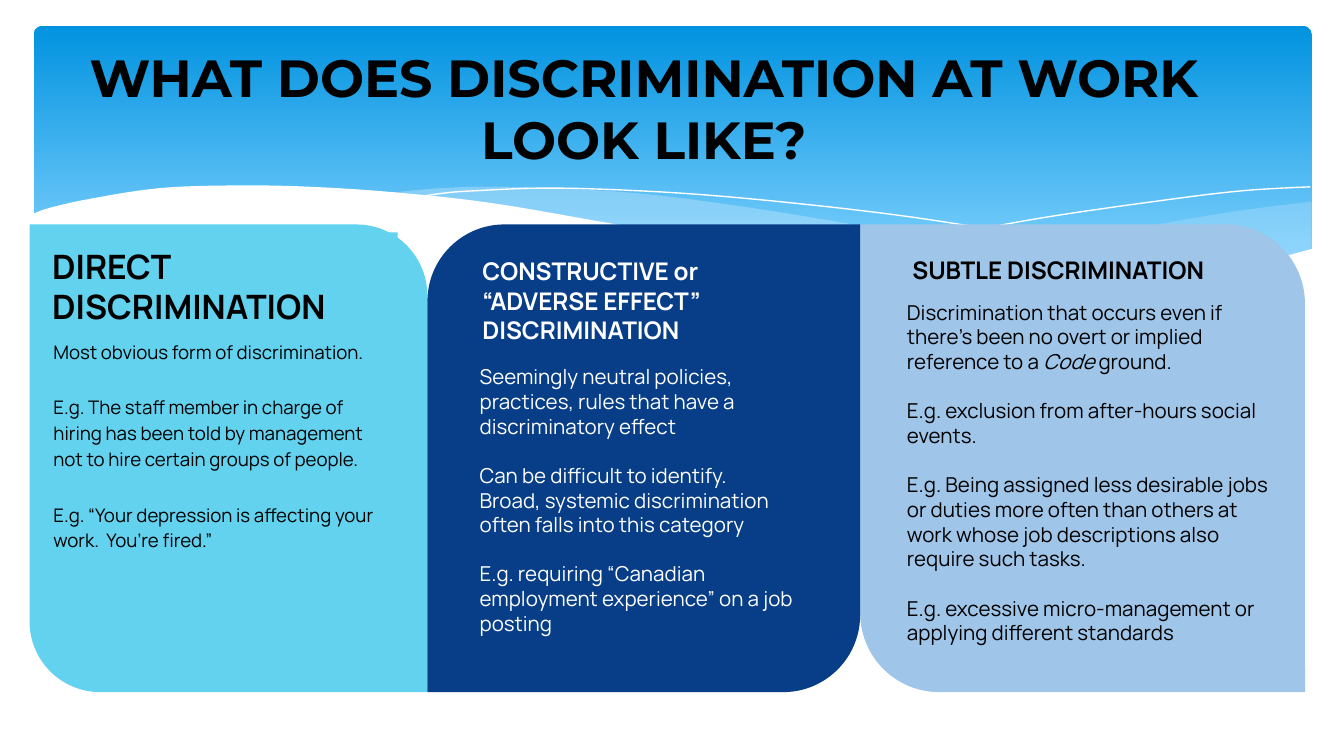
from pptx import Presentation, oxml
from pptx import util as u
from pptx.dml import color as c
from pptx.enum import shapes, text
from pptx.oxml import ns

COLORS = {
    "black": "000000", "white": "FFFFFF", "sky": "0293E0", "pale": "81D2FE",
    "wave": "C6E7FC", "cyan": "62D2EF", "navy": "073E87", "light": "9FC5E8",
}

BANNER = (0.25, 0.19, 9.51, 2.02)
TITLE = (0.05, 0.18, 9.48, 1.24)
TOP, HEIGHT = 1.67, 3.48
GAP = 13.2

WAVES = [
    {"fill": "wave", "alpha": 29, "curves": [
        [(9.76, 1.5), (9.21, 1.57), (8.61, 1.67), (7.53, 1.86), (6.61, 1.99)],
        [(6.61, 1.99), (7.32, 2.05), (8.03, 2.08), (8.72, 2.06), (9.28, 1.98), (9.76, 1.85)]]},
    {"fill": "wave", "alpha": 40, "curves": [
        [(8.93, 2.04), (8.07, 1.95), (7.06, 1.8), (6.29, 1.66), (5.41, 1.52),
         (4.65, 1.43), (3.8, 1.39), (3.28, 1.4), (2.86, 1.44)],
        [(2.86, 1.44), (3.62, 1.52), (4.49, 1.66), (5.66, 1.86), (6.65, 2),
         (7.48, 2.07), (8.18, 2.09), (8.93, 2.04)]]},
    {"line": "white", "curves": [
        [(3.09, 1.47), (3.28, 1.44), (3.53, 1.42), (4.16, 1.4), (5.1, 1.44), (6.08, 1.53),
         (6.95, 1.64), (7.95, 1.81), (9.07, 2.04)]]},
    {"line": "white", "curves": [
        [(6.13, 1.92), (6.95, 1.77), (7.76, 1.62), (8.66, 1.49), (9.24, 1.42), (9.75, 1.39)]]},
    {"fill": "white", "curves": [
        [(9.77, 1.85), (9.3, 1.97), (8.75, 2.05), (8.09, 2.07), (7.26, 2.04),
         (6.26, 1.94), (5.29, 1.79), (4.47, 1.65), (3.65, 1.51), (2.92, 1.43),
         (2.3, 1.39), (1.77, 1.38), (1.19, 1.4), (0.67, 1.48), (0.36, 1.55), (0.23, 1.6)],
        [(0.23, 2.47), (9.77, 2.47)]]},
]

COLUMNS = [
    {"box": (6.4, TOP, 3.31, HEIGHT), "fill": "light", "font": "black", "corners": (0, 0.178),
     "heading": {"at": (0.29, 0.13, 3.31, 1.02), "size": 13, "lines": [("SUBTLE DISCRIMINATION", 0)]},
     "body": {"at": (0.25, 0.46, 2.96, 2.44), "size": 11, "fill": "light", "lines": [
         ("Discrimination that occurs even if there’s been no overt or implied "
          "reference to a *Code *ground.", 0),
         ("E.g. exclusion from after-hours social events.", GAP),
         ("E.g. Being assigned less desirable jobs or duties more often than others at "
          "work whose job descriptions also require such tasks.", GAP),
         ("E.g. excessive micro-management or applying different standards", GAP)]}},
    {"box": (0.22, TOP, 2.96, HEIGHT), "fill": "cyan", "font": "black", "corners": (0, 0.178),
     "heading": {"at": (0.07, 0.06, 2.67, 1.02), "size": 18, "fill": "cyan",
                 "lines": [("DIRECT DISCRIMINATION", 0)]},
     "body": {"at": (0.08, 0.74, 2.67, 2.46), "size": 10, "fill": "cyan", "spacing": 1.15, "lines": [
         ("Most obvious form of discrimination.", 0),
         ("E.g. The staff member in charge of hiring has been told by management "
          "not to hire certain groups of people.", 16),
         ("E.g. “Your depression is affecting your work.  You’re fired.”", 16)]}},
    {"box": (3.18, TOP, 3.22, HEIGHT), "fill": "navy", "font": "white", "corners": (0.178, 0),
     "heading": {"at": (0.31, 0.14, 2.61, 1.12), "size": 13,
                 "lines": [("CONSTRUCTIVE or “ADVERSE EFFECT” DISCRIMINATION", 0)]},
     "body": {"at": (0.29, 0.94, 2.71, 2.55), "size": 11, "lines": [
         ("Seemingly neutral policies, practices, rules that have a discriminatory effect", 0),
         ("Can be difficult to identify.", GAP),
         ("Broad, systemic discrimination often falls into this category", 0),
         ("E.g. requiring “Canadian employment experience” on a job posting", GAP)]}},
]


def rgb(name):
    return c.RGBColor.from_string(COLORS[name])


def apply(obj, formats):
    for name, value in formats.items():
        setattr(obj, name, value)


def paint(sp, fill):
    sp.shadow.inherit = False
    sp.line.fill.background()
    sp.fill.solid()
    sp.fill.fore_color.rgb = rgb(fill)


def add_panel(s, kind, box, fill, adjustments=()):
    sp = s.shapes.add_shape(kind, *map(u.Inches, box))
    paint(sp, fill)
    for i, value in enumerate(adjustments):
        sp.adjustments[i] = value
    return sp


def smooth(knots, steps=6):
    padded = [knots[0], *knots, knots[-1]]
    points = [knots[0]]
    for quad in zip(padded, padded[1:], padded[2:], padded[3:]):
        for t in (i / steps for i in range(1, steps + 1)):
            points.append(tuple(
                q + t * ((r - p) + t * ((2 * p - 5 * q + 4 * r - v) + t * (3 * q - p - 3 * r + v))) / 2
                for p, q, r, v in zip(*quad)))
    return points


def add_wave(s, curves, fill=None, line=None, alpha=100):
    points = [(u.Inches(x), u.Inches(y)) for knots in curves for x, y in smooth(knots)]
    builder = s.shapes.build_freeform(*points[0], scale=1.0)
    builder.add_line_segments(points[1:], close=fill is not None)
    sp = builder.convert_to_shape()
    if fill:
        paint(sp, fill)
        if alpha < 100:
            color = sp.element.spPr.find(ns.qn("a:solidFill"))[0]
            color.append(oxml.parse_xml(f'<a:alpha {ns.nsdecls("a")} val="{alpha * 1000}"/>'))
    else:
        sp.shadow.inherit = False
        sp.fill.background()
        sp.line.color.rgb = rgb(line)
        sp.line.width = u.Pt(0.75)


def add_header(s, box):
    sp = add_panel(s, shapes.MSO_SHAPE.ROUNDED_RECTANGLE, box, "sky", [0.034])
    sp.fill.gradient()
    sp.fill.gradient_angle = 270
    for stop, (position, name) in zip(sp.fill.gradient_stops, [(0, "sky"), (0.9, "pale")]):
        stop.position = position
        stop.color.rgb = rgb(name)
    for wave in WAVES:
        add_wave(s, **wave)


def add_title(s, box):
    sp = s.shapes.title
    s.shapes.element.append(sp.element)
    apply(sp, dict(zip(("left", "top", "width", "height"), map(u.Inches, box))))
    tf = sp.text_frame
    apply(tf, {"word_wrap": True, "auto_size": text.MSO_AUTO_SIZE.NONE,
               "vertical_anchor": text.MSO_ANCHOR.MIDDLE,
               "margin_left": u.Inches(0.07), "margin_right": u.Inches(0.07),
               "margin_top": u.Inches(0.04), "margin_bottom": u.Inches(0.04)})
    p = tf.paragraphs[0]
    p.alignment = text.PP_ALIGN.CENTER
    r = p.add_run()
    r.text = "WHAT DOES DISCRIMINATION AT WORK LOOK LIKE?"
    apply(r.font, {"name": "Montserrat", "size": u.Pt(28), "bold": True})
    r.font.color.rgb = rgb("black")


def add_text(s, box, lines, size, color, bold=False, fill=None, spacing=1.0):
    if fill:
        sp = add_panel(s, shapes.MSO_SHAPE.RECTANGLE, box, fill)
    else:
        sp = s.shapes.add_textbox(*map(u.Inches, box))
    tf = sp.text_frame
    apply(tf, {"word_wrap": True, "vertical_anchor": text.MSO_ANCHOR.TOP})
    apply(tf, {f"margin_{side}": u.Inches(0.1) for side in ("left", "right", "top", "bottom")})
    for i, (line, before) in enumerate(lines):
        p = tf.add_paragraph() if i else tf.paragraphs[0]
        apply(p, {"alignment": text.PP_ALIGN.LEFT, "line_spacing": spacing,
                  "space_before": u.Pt(before)})
        for j, part in enumerate(line.split("*")):
            r = p.add_run()
            r.text = part
            apply(r.font, {"name": "Manrope", "size": u.Pt(size), "bold": bold, "italic": j % 2 == 1})
            r.font.color.rgb = rgb(color)


def add_column(s, box, fill, font, corners, heading, body):
    add_panel(s, shapes.MSO_SHAPE.ROUND_2_DIAG_RECTANGLE, box, fill, corners)
    for block, bold in ((heading, True), (body, False)):
        x, y, w, h = block["at"]
        formats = {k: v for k, v in block.items() if k != "at"}
        add_text(s, (box[0] + x, box[1] + y, w, h), color=font, bold=bold, **formats)


def main():
    prs = Presentation()
    apply(prs, {"slide_width": u.Inches(10), "slide_height": u.Inches(10 * 9 / 16)})
    s = prs.slides.add_slide(prs.slide_layouts[5])
    add_header(s, BANNER)
    add_title(s, TITLE)
    for column in COLUMNS:
        add_column(s, **column)
    prs.save("out.pptx")


if __name__ == "__main__":
    main()
